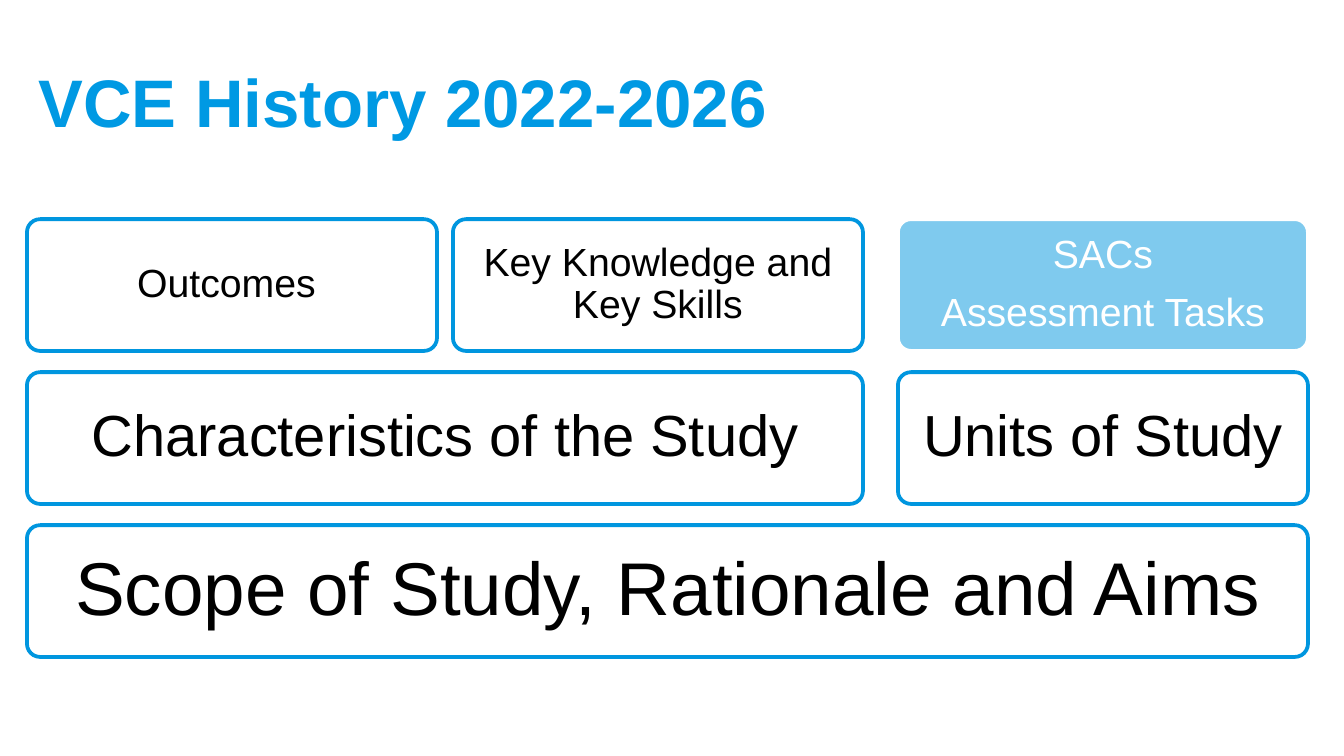
from lxml.etree import SubElement
from pptx import Presentation
from pptx.dml.color import RGBColor
from pptx.enum.shapes import MSO_SHAPE as Preset
from pptx.enum.text import MSO_ANCHOR as Anchor, PP_ALIGN as Align
from pptx.oxml.ns import qn
from pptx.util import Cm, Pt

COLORS = {"title": "0099E3", "blue": "0096DF", "white": "FFFFFF", "black": "000000"}
FONT = "Arial"

# Content: text lines, row, first column, last column, highlighted
TITLE = "VCE History 2022-2026"
BOXES = [
    (["Scope of Study, Rationale and Aims"], 2, 0, 2, False),
    (["Characteristics of the Study"], 1, 0, 1, False),
    (["Outcomes "], 0, 0, 0, False),
    (["Key Knowledge and Key Skills"], 0, 1, 1, False),
    (["Units of Study"], 1, 2, 2, False),
    (["SACs", "Assessment Tasks"], 0, 2, 2, True),
]

# Grid in cm; type size (pt) and inset (cm) grow row by row
COLUMN_LEFTS = [0.51, 8.56, 16.97]
COLUMN_WIDTH, ROW_HEIGHT = 7.75, 2.49
ROW_TOP, ROW_PITCH = 4.14, 2.89
ROW_STYLES = [(21, 0.23), (31, 0.33), (40, 0.42)]


def color(name):
    return RGBColor.from_string(COLORS[name])


def style_font(paragraph, size, color_name, bold=False):
    font = paragraph.font
    font.name, font.size, font.bold = FONT, Pt(size), bold
    font.color.rgb = color(color_name)


def add_title(slide):
    box = slide.shapes.add_textbox(Cm(0.48), Cm(0.71), Cm(24.21), Cm(2.39))
    frame = box.text_frame
    frame.word_wrap = True
    frame.vertical_anchor = Anchor.MIDDLE
    frame.text = TITLE
    style_font(frame.paragraphs[0], 36, "title", bold=True)


def add_box(slide, lines, row, first, last, highlighted):
    left = COLUMN_LEFTS[first]
    width = COLUMN_LEFTS[last] + COLUMN_WIDTH - left
    shape = slide.shapes.add_shape(
        Preset.ROUNDED_RECTANGLE, Cm(left), Cm(ROW_TOP + row * ROW_PITCH),
        Cm(width), Cm(ROW_HEIGHT))
    shape.adjustments[0] = 0.1
    shape.shadow.inherit = False
    shape.fill.solid()
    shape.fill.fore_color.rgb = color("blue" if highlighted else "white")
    shape.line.color.rgb = color("white" if highlighted else "blue")
    shape.line.width = Pt(2)
    if highlighted:  # half transparent fill
        fill_color = shape._element.spPr.find(qn("a:solidFill"))[0]
        SubElement(fill_color, qn("a:alpha"), val="50000")

    # Centred text
    size, inset = ROW_STYLES[row]
    frame = shape.text_frame
    frame.word_wrap = True
    frame.vertical_anchor = Anchor.MIDDLE
    frame.margin_left = frame.margin_right = Cm(inset)
    frame.margin_top = frame.margin_bottom = Cm(inset)
    frame.text = "\n".join(lines)
    for index, paragraph in enumerate(frame.paragraphs):
        paragraph.alignment = Align.CENTER
        paragraph.line_spacing = 0.9
        if index:
            paragraph.space_before = Pt(8.5)
        style_font(paragraph, size, "white" if highlighted else "black")


def main():
    presentation = Presentation()
    presentation.slide_width, presentation.slide_height = Cm(25.4), Cm(14.28)
    slide = presentation.slides.add_slide(presentation.slide_layouts[6])
    add_title(slide)
    for box in BOXES:
        add_box(slide, *box)
    presentation.save("out.pptx")


if __name__ == "__main__":
    main()
